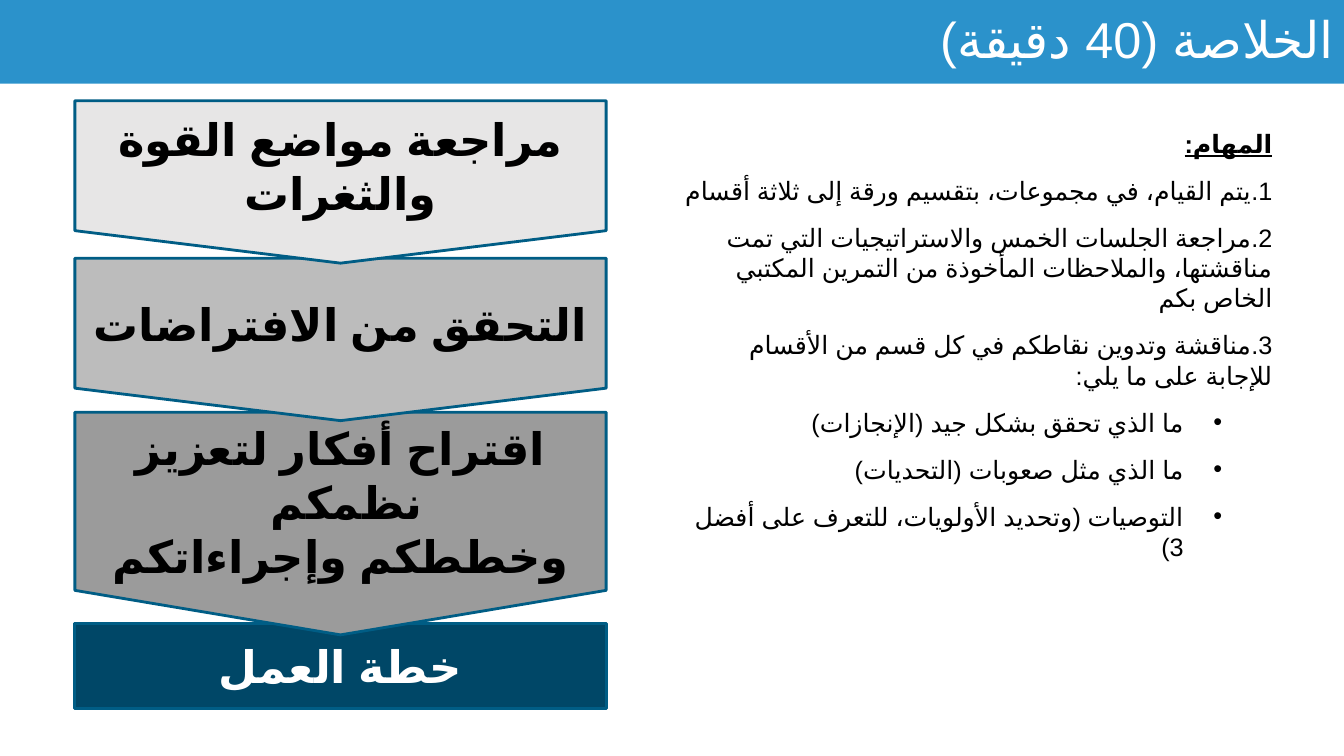
from pptx import Presentation
from pptx.dml.color import RGBColor
from pptx.enum.lang import MSO_LANGUAGE_ID
from pptx.enum.shapes import MSO_SHAPE
from pptx.enum.text import MSO_ANCHOR, PP_ALIGN
from pptx.oxml.ns import qn
from pptx.util import Pt
from lxml import etree

TASKS = [
    "يتم القيام، في مجموعات، بتقسيم ورقة إلى ثلاثة أقسام",
    "مراجعة الجلسات الخمس والاستراتيجيات التي تمت مناقشتها، والملاحظات المأخوذة من التمرين المكتبي الخاص بكم",
    "مناقشة وتدوين نقاطكم في كل قسم من الأقسام للإجابة على ما يلي:",
]
QUESTIONS = [
    ("ما الذي تحقق بشكل جيد (الإنجازات)", "Arial"),
    ("ما الذي مثل صعوبات (التحديات)", "Arial"),
    ("التوصيات (وتحديد الأولويات، للتعرف على أفضل 3)", "Calibri"),
]
# Text, shape, top, height, fill, font, text colour; back to front
STEPS = [
    ("خطة العمل", MSO_SHAPE.RECTANGLE, 445.5, 60.5, "004767", "Arial", "FFFFFF"),
    ("اقتراح أفكار لتعزيز نظمكم \vوخططكم وإجراءاتكم",
     MSO_SHAPE.FLOWCHART_OFFPAGE_CONNECTOR, 294.5, 159, "9B9B9B", "Calibri", "000000"),
    ("التحقق من الافتراضات",
     MSO_SHAPE.FLOWCHART_OFFPAGE_CONNECTOR, 184.5, 116, "BCBCBC", "Calibri", "000000"),
    ("مراجعة مواضع القوة والثغرات",
     MSO_SHAPE.FLOWCHART_OFFPAGE_CONNECTOR, 72, 116, "E7E6E6", "Calibri", "000000"),
]


def rgb(value):
    return RGBColor.from_string(value)


def write(p, text, size, font, color="000000", align=PP_ALIGN.RIGHT, bold=False):
    """Fill one right-to-left paragraph with Arabic text."""
    p.text = text
    p.alignment = align
    pPr = p._p.get_or_add_pPr()
    pPr.set("rtl", "1")
    for f in [p.font] + [r.font for r in p.runs]:
        f.size, f.name, f.bold = Pt(size), font, bold
        f.color.rgb = rgb(color)
        f.language_id = MSO_LANGUAGE_ID.ARABIC
    # Arabic script takes the complex-script font
    for props in [pPr.find(qn("a:defRPr"))] + [r._r.get_or_add_rPr() for r in p.runs]:
        etree.SubElement(props, qn("a:cs"), typeface="Arial")


def add_block(slide, kind, x, y, w, h, fill, line=None):
    sp = slide.shapes.add_shape(kind, Pt(x), Pt(y), Pt(w), Pt(h))
    sp.shadow.inherit = False
    sp.fill.solid()
    sp.fill.fore_color.rgb = rgb(fill)
    if line:
        sp.line.color.rgb = rgb(line)
        sp.line.width = Pt(2)
    else:
        sp.line.fill.background()
    tf = sp.text_frame
    tf.word_wrap = True
    tf.vertical_anchor = MSO_ANCHOR.MIDDLE
    return tf


def add_list_item(tf, text, font, margin, indent, tag, **bullet):
    p = tf.add_paragraph()
    write(p, text, 18, font)
    p.space_before = Pt(12)
    pPr = p._p.get_or_add_pPr()
    pPr.set("marL", str(Pt(margin)))
    pPr.set("indent", str(Pt(indent)))
    defaults = pPr.find(qn("a:defRPr"))
    defaults.addprevious(etree.Element(qn("a:buFont"), typeface="Arial"))
    defaults.addprevious(etree.Element(qn(tag), **bullet))


def add_tasks(slide):
    tf = slide.shapes.add_textbox(Pt(478), Pt(88), Pt(438), Pt(360)).text_frame
    tf.word_wrap = True
    heading = tf.paragraphs[0]
    write(heading, "المهام:", 18, "Arial", bold=True)
    heading.runs[0].font.underline = True
    for task in TASKS:
        add_list_item(tf, task, "Arial", 0, -0.72, "a:buAutoNum", type="arabicPeriod")
    for question, font in QUESTIONS:
        add_list_item(tf, question, font, 63.4, -27.4, "a:buChar", char="•")


def main():
    prs = Presentation()
    prs.slide_width, prs.slide_height = Pt(960), Pt(540)
    slide = prs.slides.add_slide(prs.slide_layouts[6])

    # Title band
    tf = add_block(slide, MSO_SHAPE.RECTANGLE, 0, 0, 960, 59.8, "2B92CB")
    write(tf.paragraphs[0], "الخلاصة (40 دقيقة)", 36, "Arial", "FFFFFF")
    tf.paragraphs[0].line_spacing = 0.9

    # Chain of steps
    for text, kind, top, height, fill, font, color in STEPS:
        tf = add_block(slide, kind, 53.5, top, 379.5, height, fill, "005D85")
        write(tf.paragraphs[0], text, 32, font, color, PP_ALIGN.CENTER, True)

    # Task list
    add_tasks(slide)
    prs.save("out.pptx")


if __name__ == "__main__":
    main()
